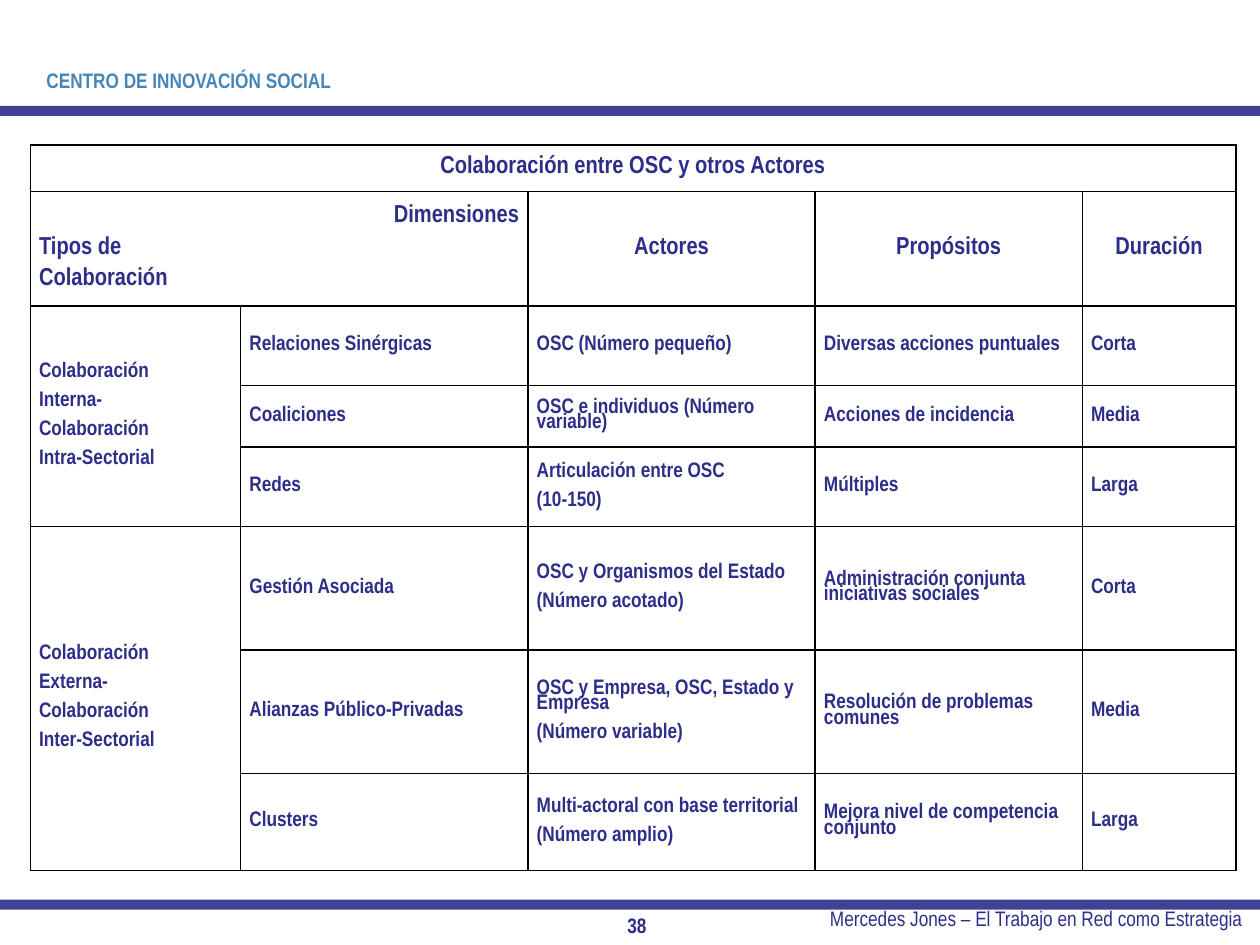
from lxml.etree import SubElement
from pptx import Presentation
from pptx.dml.color import RGBColor
from pptx.enum.shapes import MSO_SHAPE as Shape
from pptx.enum.text import MSO_ANCHOR as Anchor, PP_ALIGN as Align
from pptx.oxml.ns import qn
from pptx.util import Inches, Pt

INK = "2D2D8A"


def color(value):
    return RGBColor.from_string(value)


def format_paragraph(paragraph, size, ink, bold, align):
    paragraph.alignment = align
    for run in paragraph.runs:
        run.font.name = "Arial Narrow"
        run.font.size = Pt(size)
        run.font.bold = bold
        run.font.color.rgb = color(ink)


presentation = Presentation()
presentation.slide_width = Inches(10)
presentation.slide_height = Inches(7.5)
slide = presentation.slides.add_slide(presentation.slide_layouts[6])

for top in (0.84, 7.14):
    bar = slide.shapes.add_shape(Shape.RECTANGLE, 0, Inches(top), Inches(10), Inches(0.08))
    bar.shadow.inherit = False
    bar.fill.solid()
    bar.fill.fore_color.rgb = color("404296")
    bar.line.fill.background()

labels = [
    ("CENTRO DE INNOVACIÓN SOCIAL", (0.27, 0.36, 2.48, 0.56), "4585B7", True, Align.LEFT, Anchor.MIDDLE),
    ("Mercedes Jones – El Trabajo en Red como Estrategia", (5.31, 7.14, 4.65, 0.39), INK, False, Align.RIGHT, Anchor.TOP),
    ("38", (4.84, 7.19, 0.43, 0.31), INK, True, Align.CENTER, Anchor.MIDDLE),
]
for text, box, ink, bold, align, anchor in labels:
    shape = slide.shapes.add_textbox(*map(Inches, box))
    text_frame = shape.text_frame
    text_frame.word_wrap = True
    text_frame.vertical_anchor = anchor
    text_frame.text = text
    format_paragraph(text_frame.paragraphs[0], 12, ink, bold, align)

rows = [
    ["Colaboración entre OSC y otros Actores", "", "", "", ""],
    ["Dimensiones\nTipos de\nColaboración", "", "Actores", "Propósitos", "Duración"],
    ["Colaboración\nInterna-\nColaboración\nIntra-Sectorial", "Relaciones Sinérgicas",
     "OSC (Número pequeño)", "Diversas acciones puntuales", "Corta"],
    ["", "Coaliciones", "OSC e individuos (Número variable)", "Acciones de incidencia", "Media"],
    ["", "Redes", "Articulación entre OSC\n(10-150)", "Múltiples", "Larga"],
    ["Colaboración\nExterna-\nColaboración\nInter-Sectorial", "Gestión Asociada",
     "OSC y Organismos del Estado\n(Número acotado)", "Administración conjunta iniciativas sociales", "Corta"],
    ["", "Alianzas Público-Privadas", "OSC y Empresa, OSC, Estado y Empresa\n(Número variable)",
     "Resolución de problemas comunes", "Media"],
    ["", "Clusters", "Multi-actoral con base territorial\n(Número amplio)",
     "Mejora nivel de competencia conjunto", "Larga"],
]
widths = [1.67, 2.28, 2.28, 2.12, 1.22]
heights = [0.37, 0.91, 0.63, 0.49, 0.63, 0.98, 0.98, 0.77]
table = slide.shapes.add_table(
    len(rows), len(widths), Inches(0.24), Inches(1.15), Inches(sum(widths)), Inches(sum(heights))
).table
table.first_row = False
table.horz_banding = False
for column, width in zip(table.columns, widths):
    column.width = Inches(width)
for row, height in zip(table.rows, heights):
    row.height = Inches(height)

for row_index, row in enumerate(rows):
    is_header = row_index < 2
    for column_index, text in enumerate(row):
        cell = table.cell(row_index, column_index)
        cell.margin_left = cell.margin_right = Inches(0.07)
        cell.margin_top = cell.margin_bottom = 0
        cell.vertical_anchor = Anchor.MIDDLE
        properties = cell._tc.get_or_add_tcPr()
        for side in ("a:lnL", "a:lnR", "a:lnT", "a:lnB"):
            border = SubElement(properties, qn(side), w=str(Pt(1)))
            fill = SubElement(border, qn("a:solidFill"))
            SubElement(fill, qn("a:srgbClr"), val="000000")
        cell.fill.background()
        cell.text_frame.text = text
        if is_header:
            align = Align.CENTER
        else:
            align = Align.JUSTIFY if column_index in (0, 4) else Align.LEFT
        for index, paragraph in enumerate(cell.text_frame.paragraphs):
            format_paragraph(paragraph, 14 if is_header else 12, INK, True, align)
            paragraph.line_spacing = 0.8
            if index:
                paragraph.space_before = Pt(7.5)

corner, *corner_rest = table.cell(1, 0).text_frame.paragraphs
corner.alignment = Align.RIGHT
for paragraph in corner_rest:
    paragraph.alignment = Align.JUSTIFY

for first, last in [((0, 0), (0, 4)), ((1, 0), (1, 1)), ((2, 0), (4, 0)), ((5, 0), (7, 0))]:
    table.cell(*first).merge(table.cell(*last))

presentation.save("out.pptx")
